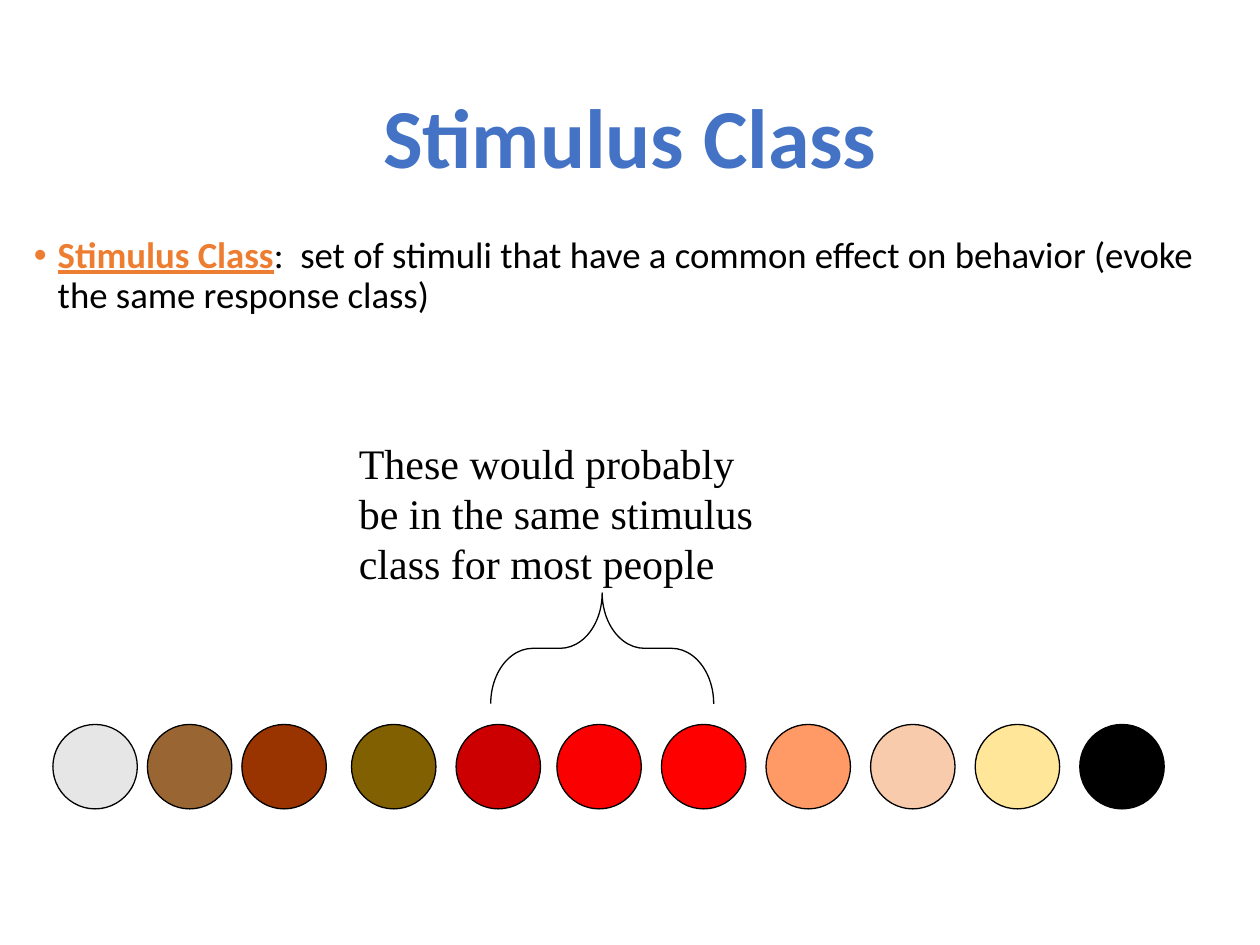
from pptx import Presentation
from pptx.dml.color import RGBColor
from pptx.enum.shapes import MSO_SHAPE
from pptx.enum.text import MSO_ANCHOR, PP_ALIGN
from pptx.oxml.ns import qn
from pptx.util import Inches, Pt
from lxml.etree import SubElement

COLORS = {
    "title": "4472C4",
    "term": "ED7D31",
    "black": "000000",
    "light gray": "E7E6E6",
    "tan": "996633",
    "rust": "993300",
    "olive": "806000",
    "dark red": "CC0000",
    "near red": "FA0000",
    "red": "FF0000",
    "orange": "FF9966",
    "peach": "F8CBAD",
    "yellow": "FFE699",
}
CIRCLE_SIZE = 0.67
CIRCLE_TOP = 5.75
CIRCLE_GROUPS = [
    (0.42, 0.75, ["light gray", "tan", "rust"]),
    (2.79, 0.83, ["olive", "dark red"]),
    (4.42, 0.83, ["near red", "red", "orange", "peach", "yellow", "black"]),
]


def rgb(name):
    return RGBColor.from_string(COLORS[name])


def add_text(s, box, runs, font, size, anchor=MSO_ANCHOR.TOP):
    sp = s.shapes.add_textbox(*(Inches(v) for v in box))
    tf = sp.text_frame
    tf.word_wrap = True
    tf.vertical_anchor = anchor
    p = tf.paragraphs[0]
    for text, color, bold, underline in runs:
        r = p.add_run()
        r.text = text
        r.font.name = font
        r.font.size = Pt(size)
        r.font.bold = bold
        r.font.underline = underline
        r.font.color.rgb = rgb(color)
    return p


def add_bullet(p, color, indent):
    pPr = p._p.get_or_add_pPr()
    pPr.set("marL", str(Inches(indent)))
    pPr.set("indent", str(-Inches(indent)))
    buClr = SubElement(pPr, qn("a:buClr"))
    SubElement(buClr, qn("a:srgbClr"), val=COLORS[color])
    SubElement(pPr, qn("a:buFont"), typeface="Arial")
    SubElement(pPr, qn("a:buChar"), char="•")


def add_outlined(s, shape, box, fill=None):
    sp = s.shapes.add_shape(shape, *(Inches(v) for v in box))
    sp.shadow.inherit = False
    if fill:
        sp.fill.solid()
        sp.fill.fore_color.rgb = rgb(fill)
    else:
        sp.fill.background()
    sp.line.color.rgb = rgb("black")
    sp.line.width = Pt(0.75)
    return sp


def add_circles(s):
    for left, step, fills in CIRCLE_GROUPS:
        for i, fill in enumerate(fills):
            box = (left + i * step, CIRCLE_TOP, CIRCLE_SIZE, CIRCLE_SIZE)
            add_outlined(s, MSO_SHAPE.OVAL, box, fill)


def add_brace(s):
    brace = add_outlined(s, MSO_SHAPE.RIGHT_BRACE, (4.34, 4.26, 0.88, 1.77))
    brace.rotation = 270
    brace.adjustments[0] = 0.38
    brace.adjustments[1] = 0.5


def main():
    prs = Presentation()
    prs.slide_width = Inches(10)
    prs.slide_height = Inches(7.5)
    s = prs.slides.add_slide(prs.slide_layouts[6])

    title = add_text(s, (0.69, 0.4, 8.62, 1.45),
                     [("Stimulus Class", "title", True, False)],
                     "Calibri", 48, MSO_ANCHOR.MIDDLE)
    title.alignment = PP_ALIGN.CENTER
    title.line_spacing = 0.9

    definition = add_text(s, (0.17, 1.83, 9.67, 5.42), [
        ("Stimulus Class", "term", True, True),
        (":  set of stimuli that have a common effect on behavior "
         "(evoke the same response class)", "black", False, False),
    ], "Calibri", 21)
    definition.line_spacing = 0.9
    definition.space_before = Pt(7.5)
    add_bullet(definition, "term", 0.19)

    add_circles(s)
    add_brace(s)
    add_text(s, (2.75, 3.42, 3.5, 1.3),
             [("These would probably be in the same stimulus class for most people",
               "black", False, False)],
             "Times New Roman", 24)

    prs.save("out.pptx")


if __name__ == "__main__":
    main()
